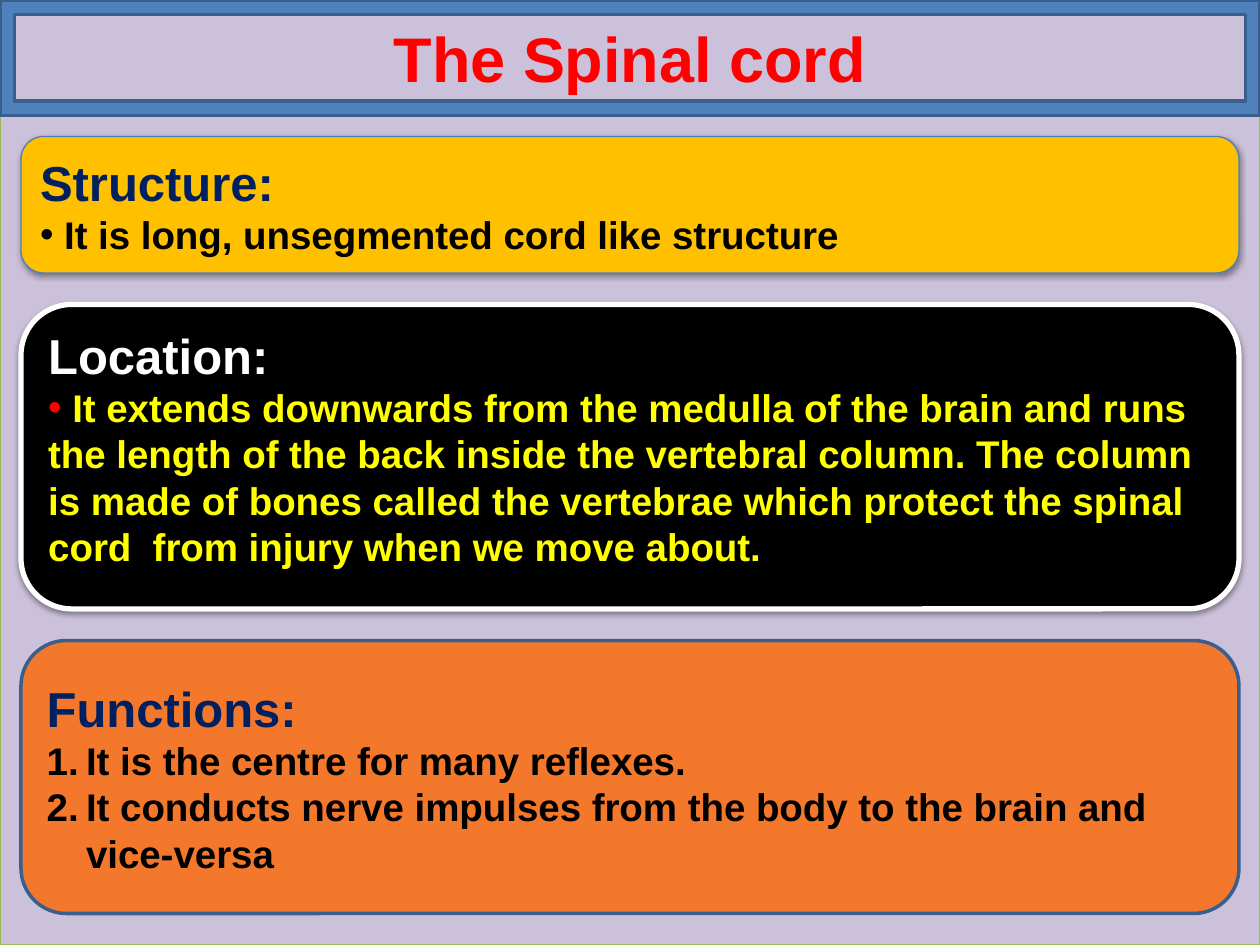
import pptx
import pptx.util
import pptx.dml.color
import pptx.enum.shapes
import pptx.enum.text
import pptx.oxml
import pptx.oxml.ns

Pt = pptx.util.Pt
SHAPES = pptx.enum.shapes.MSO_SHAPE
ANCHORS = pptx.enum.text.MSO_ANCHOR
ALIGNMENTS = pptx.enum.text.PP_ALIGN
NAMESPACE = pptx.oxml.ns.nsdecls("a")
SHADOW = (
    f'<a:effectLst {NAMESPACE}>'
    '<a:outerShdw blurRad="40000" dist="20000" dir="5400000" rotWithShape="0">'
    '<a:srgbClr val="000000"><a:alpha val="38000"/></a:srgbClr>'
    '</a:outerShdw></a:effectLst>'
)
BULLET = '<a:buChar {} char="•"/>'
NUMBER = '<a:buAutoNum {} type="arabicPeriod"/>'


def color(value):
    return pptx.dml.color.RGBColor.from_string(value)


presentation = pptx.Presentation()
presentation.slide_width = Pt(720)
presentation.slide_height = Pt(540)
slide = presentation.slides.add_slide(presentation.slide_layouts[6])

title = [("", "", 0, "The Spinal cord", 36, "FF0000")]
structure = [
    ("", "", 0, "Structure:", 28, "002060"),
    (BULLET, "000000", 0, " It is long, unsegmented cord like structure", 22, "000000"),
]
location = [
    ("", "", 0, "Location:", 28, "FFFFFF"),
    (BULLET, "FF0000", 0,
     " It extends downwards from the medulla of the brain and runs the length of "
     "the back inside the vertebral column. The column is made of bones called "
     "the vertebrae which protect the spinal cord  from injury when we move about.",
     22, "FFFF00"),
]
functions = [
    ("", "", 0, "Functions:", 28, "002060"),
    (NUMBER, "000000", 22.5, "It is the centre for many reflexes.", 22, "000000"),
    (NUMBER, "000000", 22.5,
     "It conducts nerve impulses from the body to the brain and vice-versa", 22, "000000"),
]

panels = [
    (SHAPES.RECTANGLE, (0, 0, 720, 540),
     "CCC1DA", "98B955", 0.75, True, "MIDDLE", "LEFT", []),
    (SHAPES.FRAME, (0, 0, 720, 66),
     "4F81BD", "3A5F8C", 2, False, "MIDDLE", "CENTER", title),
    (SHAPES.ROUNDED_RECTANGLE, (12, 78, 696, 78),
     "FFC000", "4B7EBC", 0.75, True, "MIDDLE", "LEFT", structure),
    (SHAPES.ROUNDED_RECTANGLE, (12, 174, 696, 174),
     "000000", "FFFFFF", 3, True, "TOP", "LEFT", location),
    (SHAPES.ROUNDED_RECTANGLE, (12, 366, 696, 156),
     "F4782C", "3A5F8C", 2, False, "MIDDLE", "LEFT", functions),
]

for kind, box, fill, line, width, shadow, anchor, alignment, paragraphs in panels:
    shape = slide.shapes.add_shape(kind, *map(Pt, box))
    shape.fill.solid()
    shape.fill.fore_color.rgb = color(fill)
    shape.line.color.rgb = color(line)
    shape.line.width = Pt(width)
    if shadow:
        shape._element.spPr.append(pptx.oxml.parse_xml(SHADOW))
    else:
        shape.shadow.inherit = False
    frame = shape.text_frame
    frame.word_wrap = True
    frame.vertical_anchor = ANCHORS[anchor]
    for index, (marker, marker_color, indent, text, size, text_color) in enumerate(paragraphs):
        paragraph = frame.add_paragraph() if index else frame.paragraphs[0]
        paragraph.alignment = ALIGNMENTS[alignment]
        if marker:
            properties = paragraph._element.get_or_add_pPr()
            properties.set("marL", str(Pt(indent)))
            properties.set("indent", str(-Pt(indent)))
            for xml in (
                f'<a:buClr {NAMESPACE}><a:srgbClr val="{marker_color}"/></a:buClr>',
                f'<a:buFont {NAMESPACE} typeface="Arial"/>',
                marker.format(NAMESPACE),
            ):
                properties.append(pptx.oxml.parse_xml(xml))
        run = paragraph.add_run()
        run.text = text
        run.font.color.rgb = color(text_color)
        for attribute, value in {"name": "Arial", "size": Pt(size), "bold": True}.items():
            setattr(run.font, attribute, value)

presentation.save("out.pptx")
